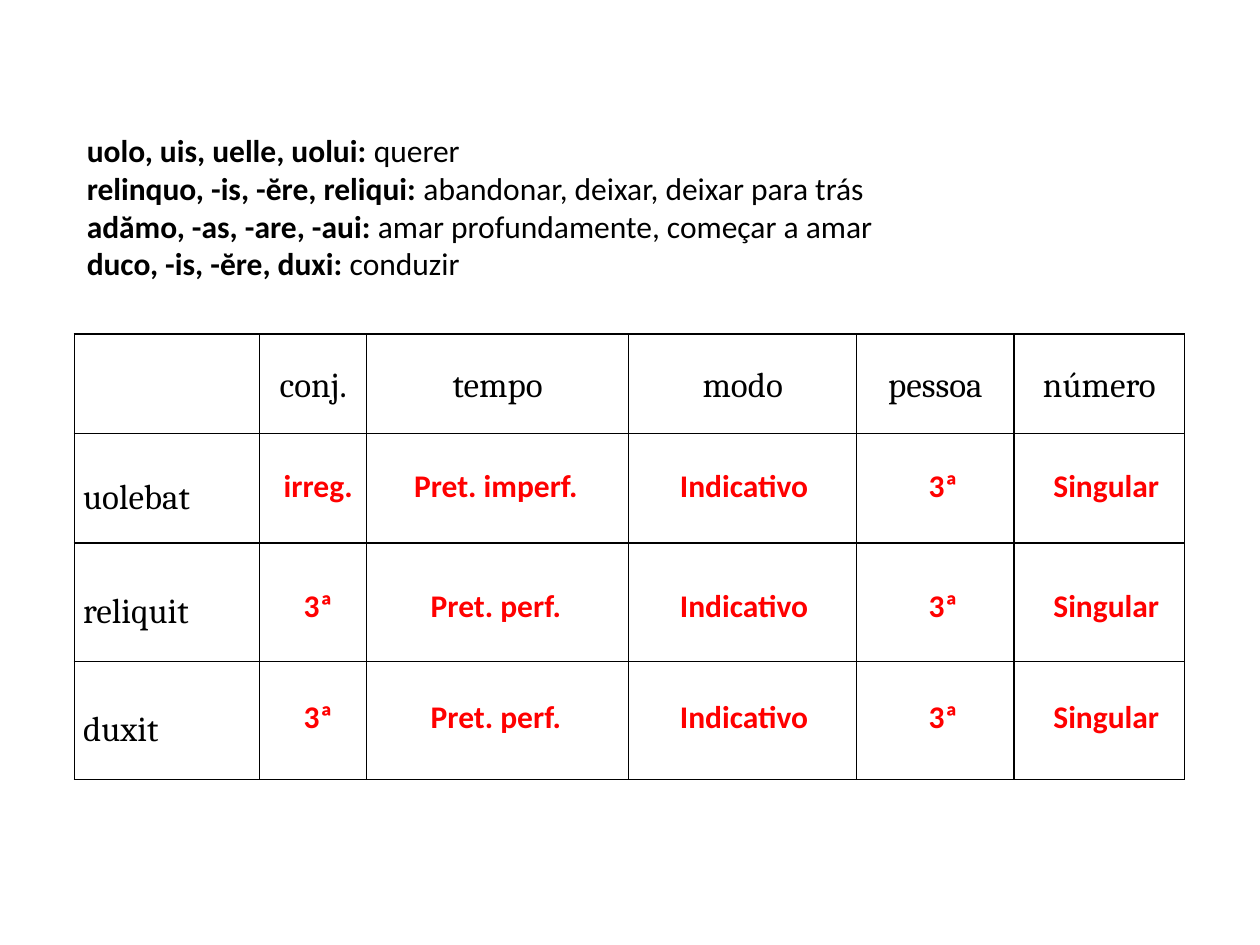
from lxml import etree
from pptx import Presentation
from pptx.dml.color import RGBColor
from pptx.enum.text import MSO_ANCHOR, MSO_AUTO_SIZE, PP_ALIGN
from pptx.oxml.ns import qn
from pptx.util import Pt

LEFT, CENTER, JUSTIFY = PP_ALIGN.LEFT, PP_ALIGN.CENTER, PP_ALIGN.JUSTIFY
MIDDLE = MSO_ANCHOR.MIDDLE
GROW = MSO_AUTO_SIZE.SHAPE_TO_FIT_TEXT
BLANK_LAYOUT = 6

COLORS = {"text": "000000", "answer": "FF0000", "border": "000000"}

VOCABULARY = [
    ("uolo, uis, uelle, uolui:", " querer"),
    ("relinquo, -is, -ĕre, reliqui:", " abandonar, deixar, deixar para trás"),
    ("adămo, -as, -are, -aui:", " amar profundamente, começar a amar"),
    ("duco, -is, -ĕre, duxi:", " conduzir"),
]
HEADINGS = ["", "conj.", "tempo", "modo", "pessoa", "número"]
VERBS = ["uolebat", "reliquit", "duxit"]
COLUMN_WIDTHS = [105.9, 61.2, 149.7, 130.3, 90, 97.4]
ROW_HEIGHTS = [56.8, 62.6, 67.7, 67.7]

# Left edge, width and one answer per verb
ANSWER_COLUMNS = [
    (153.4, 56.9, ["irreg.", "3ª", "3ª"]),
    (218.2, 130.3, ["Pret. imperf.", "Pret. perf.", "Pret. perf."]),
    (360, 130.3, ["Indicativo"] * 3),
    (513.4, 51.1, ["3ª"] * 3),
    (592.6, 79.2, ["Singular"] * 3),
]
ANSWER_TOPS = [263, 331.4, 394.6]


class VerbSlide:
    def __init__(self, slide):
        self.slide = slide

    def format_paragraph(self, paragraph, font, size, color, align):
        paragraph.alignment = align
        paragraph.font.name = font
        paragraph.font.size = Pt(size)
        paragraph.font.color.rgb = RGBColor.from_string(COLORS[color])

    def add_text(self, left, top, width, height, lines, color, align=LEFT):
        """Each line is a pair: a bold part and a regular part."""
        shape = self.slide.shapes.add_textbox(Pt(left), Pt(top), Pt(width), Pt(height))
        frame = shape.text_frame
        frame.word_wrap = True
        frame.auto_size = GROW
        for index, (bold_part, regular_part) in enumerate(lines):
            paragraph = frame.add_paragraph() if index else frame.paragraphs[0]
            self.format_paragraph(paragraph, "Calibri", 18, color, align)
            for text, bold in ((bold_part, True), (regular_part, False)):
                if text:
                    run = paragraph.add_run()
                    run.text = text
                    run.font.bold = bold

    def add_borders(self, cell):
        properties = cell._tc.get_or_add_tcPr()
        for side in ("lnL", "lnR", "lnT", "lnB"):
            line = etree.SubElement(properties, qn(f"a:{side}"), w=str(Pt(1)))
            fill = etree.SubElement(line, qn("a:solidFill"))
            etree.SubElement(fill, qn("a:srgbClr"), val=COLORS["border"])

    def format_cell(self, cell, text, align, line_spacing):
        self.add_borders(cell)
        cell.fill.background()
        cell.vertical_anchor = MIDDLE
        cell.margin_left = cell.margin_right = Pt(5)
        cell.margin_top = cell.margin_bottom = 0
        cell.text = text
        paragraph = cell.text_frame.paragraphs[0]
        self.format_paragraph(paragraph, "Cambria", 20, "text", align)
        paragraph.line_spacing = line_spacing

    def add_table(self, left, top, rows, widths, heights):
        table = self.slide.shapes.add_table(
            len(rows), len(widths), Pt(left), Pt(top), Pt(sum(widths)), Pt(sum(heights))
        ).table
        table.first_row = table.horz_banding = False
        for column, width in zip(table.columns, widths):
            column.width = Pt(width)
        for row_index, (texts, height) in enumerate(zip(rows, heights)):
            table.rows[row_index].height = Pt(height)
            align, spacing = (JUSTIFY, 1.5) if row_index else (CENTER, 1.15)
            for column_index, text in enumerate(texts):
                cell = table.cell(row_index, column_index)
                self.format_cell(cell, text, align, spacing)


def main():
    presentation = Presentation()
    presentation.slide_width, presentation.slide_height = Pt(720), Pt(540)
    layout = presentation.slide_layouts[BLANK_LAYOUT]
    verb_slide = VerbSlide(presentation.slides.add_slide(layout))

    # Table of verb forms
    rows = [HEADINGS] + [[verb] + [""] * (len(HEADINGS) - 1) for verb in VERBS]
    verb_slide.add_table(42.5, 190.8, rows, COLUMN_WIDTHS, ROW_HEIGHTS)

    # Answers over the table
    for left, width, answers in ANSWER_COLUMNS:
        for top, answer in zip(ANSWER_TOPS, answers):
            verb_slide.add_text(left, top, width, 29, [(answer, "")], "answer", CENTER)

    # Vocabulary
    verb_slide.add_text(42.5, 71.3, 666, 94.4, VOCABULARY, "text")

    presentation.save("out.pptx")


if __name__ == "__main__":
    main()
